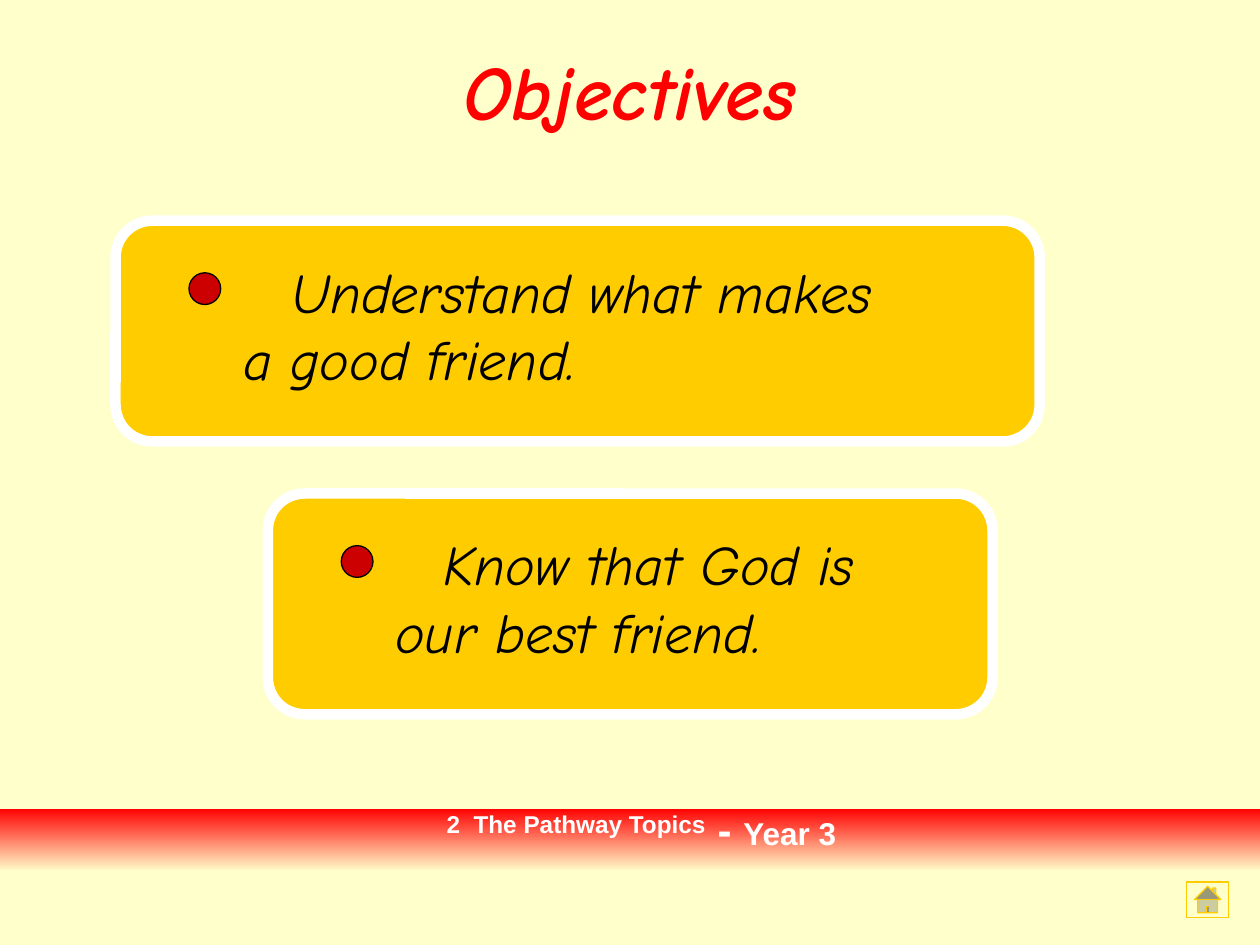
import pptx
import pptx.util
import pptx.dml.color
import pptx.enum.shapes
import pptx.enum.text
import pptx.oxml.ns

Cm, Pt = pptx.util.Cm, pptx.util.Pt
SHAPES = pptx.enum.shapes.MSO_SHAPE
ALIGN = pptx.enum.text.PP_ALIGN
ANCHOR = pptx.enum.text.MSO_ANCHOR

# Content: each card has its left, top, width (cm) and text lines
TITLE = "Objectives"
CARDS = [
    (2.33, 4.45, 18.63, ["Understand what makes", "a good friend."]),
    (5.4, 9.95, 14.61, ["Know that God is", "our best friend."]),
]
FOOTER = [
    ("2  The Pathway Topics", dict(size=24, baseline=30)),
    (" - ", dict(size=24)),
    ("Year 3", dict(size=18)),
]
CREAM, RED, GOLD, WHITE, BLACK = "FFFFCC", "FF0000", "FFCC00", "FFFFFF", "000000"
CARD_HEIGHT, DOT_SIZE = 4.45, 0.64


def colour(value):
    return pptx.dml.color.RGBColor.from_string(value)


def add_shape(kind, left, top, width, height, fill=None, line=None, weight=0.75):
    shape = page.shapes.add_shape(kind, Cm(left), Cm(top), Cm(width), Cm(height))
    shape.shadow.inherit = False
    if fill:
        shape.fill.solid()
        shape.fill.fore_color.rgb = colour(fill)
    if line:
        shape.line.color.rgb = colour(line)
        shape.line.width = Pt(weight)
    else:
        shape.line.fill.background()
    return shape


def add_box(left, top, width, height, anchor=ANCHOR.TOP, align=ALIGN.LEFT):
    """Add a wrapping text box and return its first paragraph."""
    frame = page.shapes.add_textbox(Cm(left), Cm(top), Cm(width), Cm(height)).text_frame
    frame.word_wrap = True
    frame.vertical_anchor = anchor
    para = frame.paragraphs[0]
    para.alignment = align
    return para


def add_text(para, text, size=32, font="Comic Neue", color=BLACK,
             bold=False, italic=False, baseline=0):
    span = para.add_run()
    span.text = text
    span.font.size, span.font.name = Pt(size), font
    span.font.bold, span.font.italic = bold, italic
    span.font.color.rgb = colour(color)
    if baseline:
        span.font._element.set("baseline", str(baseline * 1000))


deck = pptx.Presentation()
deck.slide_width, deck.slide_height = Cm(25.4), Cm(19.05)
page = deck.slides.add_slide(deck.slide_layouts[6])
page.background.fill.solid()
page.background.fill.fore_color.rgb = colour(CREAM)

# Footer band fading into the background
band = add_shape(SHAPES.RECTANGLE, 0, 16.3, 25.4, 1.27)
band.fill.gradient()
band.fill.gradient_angle = 270
for stop, value in zip(band.fill.gradient_stops, (RED, CREAM)):
    stop.color.rgb = colour(value)

# Title
para = add_box(1.27, 0.43, 22.86, 2.74, anchor=ANCHOR.MIDDLE, align=ALIGN.CENTER)
add_text(para, TITLE, size=44, color=RED, bold=True, italic=True)

# Footer text
para = add_box(8.69, 16.08, 8.48, 1.27, align=ALIGN.CENTER)
for text, style in FOOTER:
    add_text(para, text, font="Arial", color=WHITE, bold=True, **style)

# Home button
add_shape(SHAPES.ACTION_BUTTON_HOME, 23.92, 17.78, 0.85, 0.71, CREAM, GOLD)

# Objective cards, each with its text and dot
for left, top, width, lines in CARDS:
    add_shape(SHAPES.ROUNDED_RECTANGLE, left, top, width, CARD_HEIGHT, GOLD, WHITE, 6)
    para = add_box(left + 2.32, top + 0.61, width - 1.05, 3.81)
    para.space_before = Pt(6.4)
    para._p.get_or_add_pPr().set("indent", str(Cm(0.97)))
    for index, line in enumerate(lines):
        if index:
            para.add_line_break()
        add_text(para, line, italic=True)
    # The break takes the size of the text around it
    for line_break in para._p.findall(pptx.oxml.ns.qn("a:br")):
        line_break.append(pptx.oxml.parse_xml(
            '<a:rPr %s sz="3200"/>' % pptx.oxml.ns.nsdecls("a")))
    add_shape(SHAPES.OVAL, left + 1.48, top + 1.05, DOT_SIZE, DOT_SIZE, "CC0000", BLACK)

deck.save("out.pptx")
